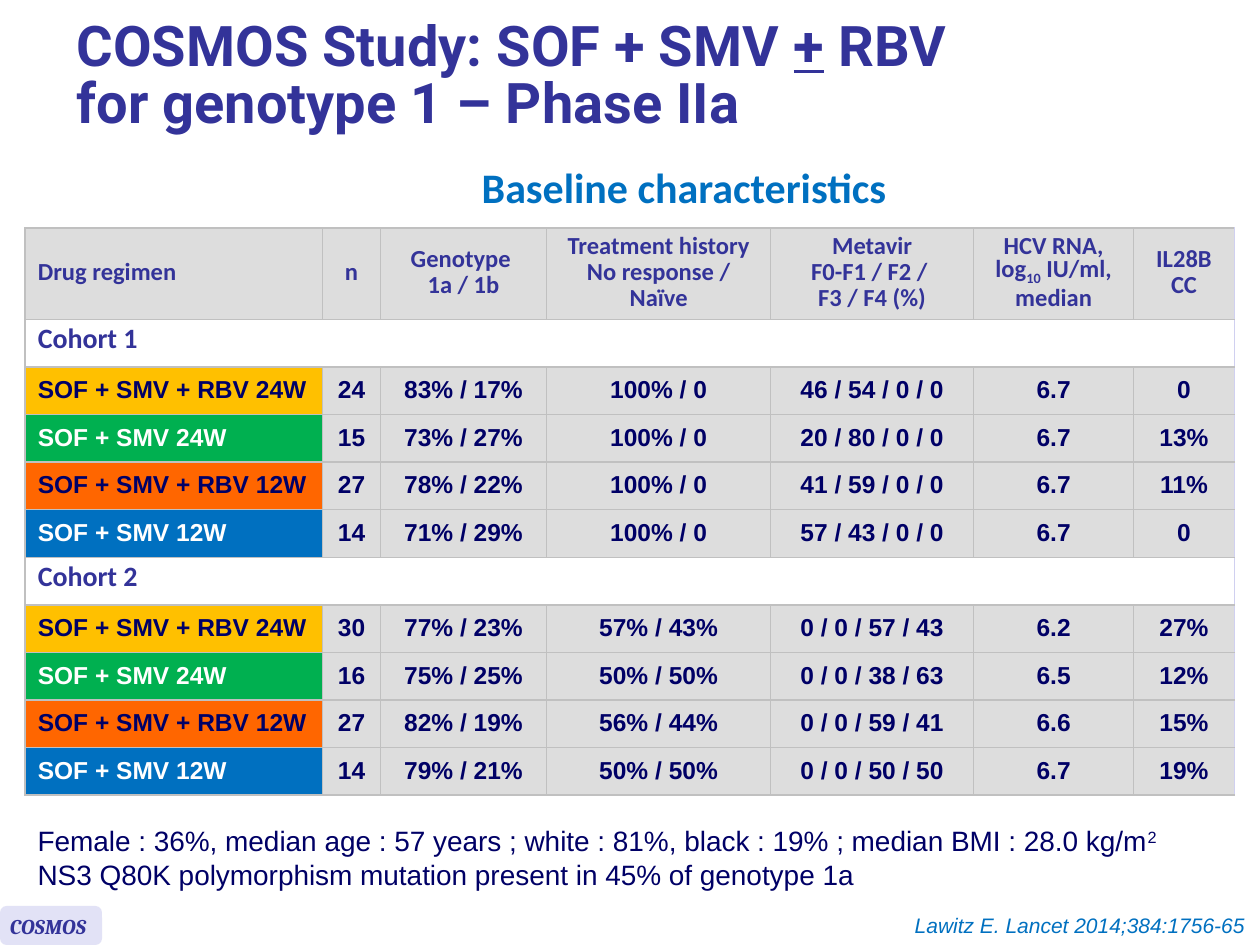
from lxml.etree import SubElement
from pptx import Presentation
from pptx.dml.color import RGBColor
from pptx.enum.shapes import MSO_SHAPE
from pptx.enum.text import MSO_ANCHOR, MSO_AUTO_SIZE, PP_ALIGN
from pptx.oxml.ns import qn
from pptx.util import Pt

NAVY, INDIGO, BLUE, WHITE = "000066", "333399", "0070C0", "FFFFFF"
GREY, BORDER, EDGE = "DDDDDD", "C0C0C0", "D0D0F0"

COLUMN_WIDTHS = [170, 33, 95, 128, 116, 91.5, 57.5]
HEADER_HEIGHT, ROW_HEIGHT = 49, 27.2
HEADERS = [
    ["Drug regimen"],
    ["n"],
    ["Genotype ", "1a / 1b"],
    ["Treatment history", "No response / Naïve"],
    ["Metavir", "F0-F1 / F2 / ", "F3 / F4 (%)"],
    [["HCV RNA, log", ("10", -25), " IU/ml, median"]],
    ["IL28B CC"],
]
REGIMENS = [
    ("SOF + SMV + RBV 24W", "FFC000", NAVY),
    ("SOF + SMV 24W", "00B050", WHITE),
    ("SOF + SMV + RBV 12W", "FF6600", NAVY),
    ("SOF + SMV 12W", BLUE, WHITE),
]
COHORTS = {
    "Cohort 1": [
        ["24", "83% / 17%", "100% / 0", "46 / 54 / 0 / 0", "6.7", "0"],
        ["15", "73% / 27%", "100% / 0", "20 / 80 / 0 / 0", "6.7", "13%"],
        ["27", "78% / 22%", "100% / 0", "41 / 59 / 0 / 0", "6.7", "11%"],
        ["14", "71% / 29%", "100% / 0", "57 / 43 / 0 / 0", "6.7", "0"],
    ],
    "Cohort 2": [
        ["30", "77% / 23%", "57% / 43%", "0 / 0 / 57 / 43", "6.2", "27%"],
        ["16", "75% / 25%", "50% / 50%", "0 / 0 / 38 / 63", "6.5", "12%"],
        ["27", "82% / 19%", "56% / 44%", "0 / 0 / 59 / 41", "6.6", "15%"],
        ["14", "79% / 21%", "50% / 50%", "0 / 0 / 50 / 50", "6.7", "19%"],
    ],
}


def rgb(value):
    """Turn a hex string into a colour."""
    return RGBColor.from_string(value)


def fill_solid(target, color):
    """Give a shape or cell a solid fill."""
    target.fill.solid()
    target.fill.fore_color.rgb = rgb(color)


def write(tf, lines, font, size, color, bold=False, italic=False,
          align=PP_ALIGN.LEFT, spacing=None):
    """Write paragraphs; a (text, percent) part is a raised or lowered run."""
    for i, line in enumerate(lines):
        p = tf.paragraphs[0] if i == 0 else tf.add_paragraph()
        p.alignment = align
        if spacing:
            p.line_spacing = spacing
        for part in [line] if isinstance(line, str) else line:
            text, shift = (part, 0) if isinstance(part, str) else part
            r = p.add_run()
            r.text = text
            r.font.name, r.font.size = font, Pt(size)
            r.font.bold, r.font.italic = bold, italic
            r.font.color.rgb = rgb(color)
            if shift:
                r._r.get_or_add_rPr().set("baseline", str(shift * 1000))


def add_text(slide, box, lines, *style, wrap=True, grow=True, **options):
    """Add a text box and return its text frame."""
    tf = slide.shapes.add_textbox(*map(Pt, box)).text_frame
    tf.word_wrap = wrap
    tf.auto_size = MSO_AUTO_SIZE.SHAPE_TO_FIT_TEXT if grow else MSO_AUTO_SIZE.NONE
    write(tf, lines, *style, **options)
    return tf


def set_borders(cell, right):
    """Draw 1 pt lines round a cell, with its own colour on the right."""
    tcPr = cell._tc.get_or_add_tcPr()
    for side in "LRTB":
        ln = SubElement(tcPr, qn(f"a:ln{side}"), w=str(Pt(1)))
        fill = SubElement(ln, qn("a:solidFill"))
        SubElement(fill, qn("a:srgbClr"), val=right if side == "R" else BORDER)


def style_cell(cell, lines, fill, font, size, color, centred, last):
    """Fill, frame and write one table cell."""
    set_borders(cell, EDGE if last else BORDER)
    fill_solid(cell, fill)
    cell.vertical_anchor = MSO_ANCHOR.MIDDLE
    write(cell.text_frame, lines, font, size, color, bold=True, spacing=Pt(15),
          align=PP_ALIGN.CENTER if centred else PP_ALIGN.LEFT)


def add_baseline_table(slide):
    """Add the table of baseline characteristics by cohort and regimen."""
    n_cols = len(COLUMN_WIDTHS)
    n_body = len(COHORTS) * (1 + len(REGIMENS))
    table = slide.shapes.add_table(
        1 + n_body, n_cols, Pt(14.4), Pt(130.3), Pt(sum(COLUMN_WIDTHS)),
        Pt(HEADER_HEIGHT + n_body * ROW_HEIGHT)).table
    table.first_row = table.horz_banding = False
    for column, width in zip(table.columns, COLUMN_WIDTHS):
        column.width = Pt(width)
    for i, row in enumerate(table.rows):
        row.height = Pt(ROW_HEIGHT if i else HEADER_HEIGHT)
    for c, lines in enumerate(HEADERS):
        style_cell(table.cell(0, c), lines, GREY, "Calibri", 14, INDIGO,
                   c > 0, c == n_cols - 1)
    top = 1
    for cohort, rows in COHORTS.items():
        table.cell(top, 0).merge(table.cell(top, n_cols - 1))
        style_cell(table.cell(top, 0), [cohort], WHITE, "Calibri", 16, INDIGO,
                   False, True)
        for i, ((name, fill, color), values) in enumerate(zip(REGIMENS, rows), top + 1):
            style_cell(table.cell(i, 0), [name], fill, "Arial", 14, color,
                       False, False)
            for c, value in enumerate(values, 1):
                style_cell(table.cell(i, c), [value], GREY, "Arial", 14, NAVY,
                           True, c == n_cols - 1)
        top += 1 + len(rows)


def add_title(slide):
    """Add the two-line title with its underlined plus sign."""
    tf = add_text(slide, (36.7, 5.8, 657.4, 77),
                  [["COSMOS Study: SOF + SMV ", "+", " RBV \vfor genotype 1 – Phase IIa"]],
                  "Roboto", 32, INDIGO, grow=False, bold=True, spacing=0.85)
    tf.vertical_anchor = MSO_ANCHOR.MIDDLE
    p = tf.paragraphs[0]
    first, last = p.runs[2].text.split("\v") if "\v" in p.runs[2].text else (" RBV ", "for genotype 1 – Phase IIa")
    p.runs[2].text = first
    p.add_line_break()
    r = p.add_run()
    r.text = last
    r.font.name, r.font.size, r.font.bold = "Roboto", Pt(32), True
    r.font.color.rgb = rgb(INDIGO)
    p.runs[1].font.underline = True


def add_study_tag(slide):
    """Add the rounded study label in the bottom corner."""
    sp = slide.shapes.add_shape(MSO_SHAPE.ROUNDED_RECTANGLE,
                                Pt(0), Pt(517.7), Pt(58.3), Pt(22.3))
    sp.shadow.inherit = False
    sp.line.fill.background()
    fill_solid(sp, "E2E2F6")
    add_text(slide, (-1.4, 518.4, 63.4, 21.6), ["COSMOS"],
             "Cambria", 12, INDIGO, bold=True, italic=True)


def main():
    """Build the slide and save it."""
    prs = Presentation()
    prs.slide_width, prs.slide_height = Pt(720), Pt(540)
    slide = prs.slides.add_slide(prs.slide_layouts[6])
    add_baseline_table(slide)
    add_text(slide, (76.3, 102.2, 629.3, 25.2), ["Baseline characteristics"],
             "Calibri", 24, BLUE, bold=True, align=PP_ALIGN.CENTER, spacing=Pt(15.2))
    add_text(slide, (14.4, 467.3, 668.2, 46.1), [
        ["Female : 36%, median age : 57 years ; white : 81%, black : 19% ; "
         "median BMI : 28.0 kg/m", ("2", 30)],
        "NS3 Q80K polymorphism mutation present in 45% of genotype 1a",
    ], "Arial", 16, NAVY, wrap=False)
    add_study_tag(slide)
    add_title(slide)
    add_text(slide, (481, 517.7, 237.6, 21.6), ["Lawitz E. Lancet 2014;384:1756-65"],
             "Arial", 12, BLUE, italic=True, align=PP_ALIGN.RIGHT)


    prs.save("out.pptx")


if __name__ == "__main__":
    main()
